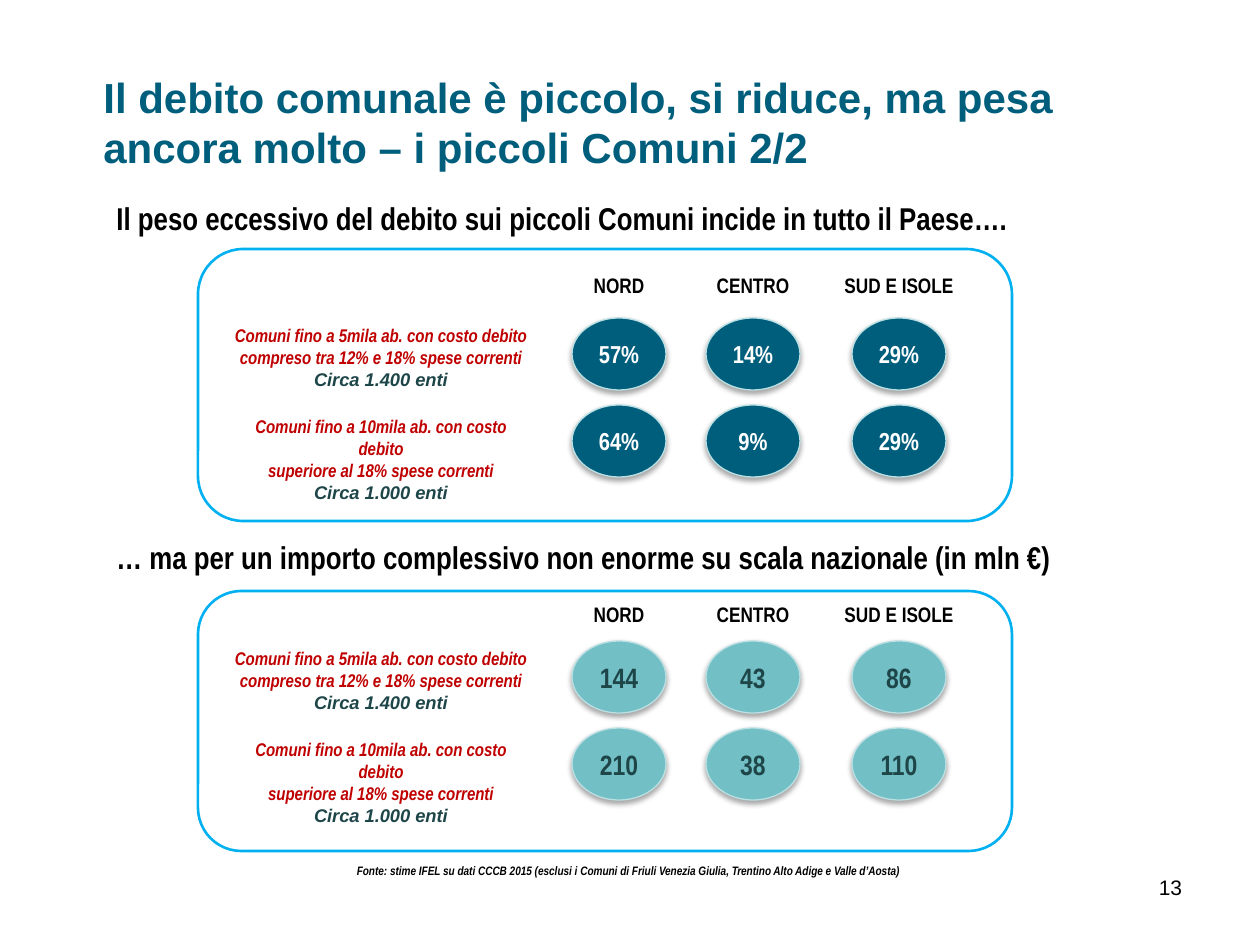
from lxml import etree
from pptx import Presentation
from pptx import util as u
from pptx.dml.color import RGBColor
from pptx.enum import shapes, text
from pptx.oxml import ns

PX = u.Inches(1) / 126
PETROL = RGBColor(0x00, 0x5E, 0x7D)
TEAL = RGBColor(0x72, 0xBF, 0xC5)
PALE = RGBColor(0xBB, 0xE0, 0xE3)
SKY = RGBColor(0x00, 0xB0, 0xF0)
RED = RGBColor(0xC0, 0x00, 0x00)
DARK = RGBColor(0x1E, 0x46, 0x49)
BLACK = RGBColor(0, 0, 0)
WHITE = RGBColor(0xFF, 0xFF, 0xFF)

CENTER = text.PP_ALIGN.CENTER
LEFT = text.PP_ALIGN.LEFT
MIDDLE = text.MSO_ANCHOR.MIDDLE
TOP = text.MSO_ANCHOR.TOP

NARROW = {"name": "Arial Narrow", "bold": True}
TITLE = {"name": "Arial", "size": u.Pt(24), "bold": True}
SUBTITLE = NARROW | {"size": u.Pt(18)}
AREA = NARROW | {"size": u.Pt(12)}
CRITERION = NARROW | {"size": u.Pt(10.5), "italic": True}
COUNT = CRITERION | {"name": "Arial"}
SOURCE = NARROW | {"size": u.Pt(7), "italic": True}
NUMBER = {"name": "Arial", "size": u.Pt(12)}

AREAS = [("NORD", 421, 82), ("CENTRO", 555, 107), ("SUD E ISOLE", 701, 163)]
GROUPS = [
    (["Comuni fino a 5mila ab. con costo debito",
      "compreso tra 12% e 18% spese correnti"], "Circa 1.400 enti", 79),
    (["Comuni fino a 10mila ab. con costo debito",
      "superiore al 18% spese correnti"], "Circa 1.000 enti", 102),
]
OVAL_W, OVAL_H = 94, 72
OVAL_PITCH, GROUP_PITCH = 87, 91


def emu(*lengths):
    """Turn px lengths into EMU."""
    return [round(length * PX) for length in lengths]


def write(frame, lines, align=LEFT, anchor=TOP, wrap=True):
    """Fill a text frame with (wording, font values, colour) lines."""
    for key, value in {"word_wrap": wrap, "vertical_anchor": anchor}.items():
        setattr(frame, key, value)
    for index, (wording, values, colour) in enumerate(lines):
        paragraph = frame.paragraphs[0] if index == 0 else frame.add_paragraph()
        paragraph.alignment = align
        run = paragraph.add_run()
        run.text = wording
        for key, value in values.items():
            setattr(run.font, key, value)
        run.font.color.rgb = colour


def add_label(slide, box, lines, **layout):
    """Place a text box in the given px box."""
    write(slide.shapes.add_textbox(*emu(*box)).text_frame, lines, **layout)


def add_shadow(shape):
    """Give a shape a soft shadow straight below it."""
    effects = shape.element.spPr.find(ns.qn("a:effectLst"))
    outer = etree.SubElement(effects, ns.qn("a:outerShdw"), blurRad="40000",
                             dist="23000", dir="5400000", rotWithShape="0")
    black = etree.SubElement(outer, ns.qn("a:srgbClr"), val="000000")
    etree.SubElement(black, ns.qn("a:alpha"), val="35000")


def add_oval(slide, box, wording, fill, colour, size):
    """Place one shaded value oval."""
    oval = slide.shapes.add_shape(shapes.MSO_SHAPE.OVAL, *emu(*box))
    oval.shadow.inherit = False
    add_shadow(oval)
    oval.fill.solid()
    oval.fill.fore_color.rgb = fill
    oval.line.color.rgb = PALE
    oval.line.width = u.Pt(0.75)
    write(oval.text_frame, [(wording, NARROW | {"size": u.Pt(size)}, colour)],
          align=CENTER, anchor=MIDDLE, wrap=False)


def add_panel(slide, box, header_top, body_top, rows, **oval_style):
    """Draw a framed panel of municipality groups by area."""
    left, top, width, height = box
    frame = slide.shapes.add_shape(shapes.MSO_SHAPE.ROUNDED_RECTANGLE, *emu(*box))
    frame.shadow.inherit = False
    frame.fill.background()
    frame.line.color.rgb = SKY
    frame.line.width = u.Pt(1.5)
    for area, center, area_width in AREAS:
        add_label(slide, (left + center - area_width / 2, top + header_top, area_width, 38),
                  [(area, AREA, BLACK)], align=CENTER, wrap=False)
    for row, (values, (criteria, count, group_height)) in enumerate(zip(rows, GROUPS)):
        lines = [(line, CRITERION, RED) for line in criteria] + [(count, COUNT, DARK)]
        add_label(slide, (left + 21, top + body_top + row * GROUP_PITCH, 324, group_height),
                  lines, align=CENTER)
        for value, (_, center, _) in zip(values, AREAS):
            add_oval(slide, (left + center - OVAL_W / 2, top + body_top + row * OVAL_PITCH,
                             OVAL_W, OVAL_H), value, **oval_style)


def add_debt_slide(deck):
    """Compose the slide on the debt of small municipalities."""
    slide = deck.slides.add_slide(deck.slide_layouts[6])
    add_label(slide, (91, 64, 999, 116),
              [("Il debito comunale è piccolo, si riduce, ma pesa ancora molto – i piccoli Comuni 2/2",
                TITLE, PETROL)], anchor=MIDDLE)
    add_label(slide, (104, 193, 953, 50),
              [("Il peso eccessivo del debito sui piccoli Comuni incide in tutto il Paese….",
                SUBTITLE, BLACK)], wrap=False)
    add_panel(slide, (198, 249, 814, 272), 17, 69, [("57%", "14%", "29%"), ("64%", "9%", "29%")],
              fill=PETROL, colour=WHITE, size=14)
    add_label(slide, (104, 532, 1012, 50),
              [("… ma per un importo complessivo non enorme su scala nazionale (in mln €)",
                SUBTITLE, BLACK)], wrap=False)
    add_panel(slide, (198, 591, 814, 260), 4, 50, [("144", "43", "86"), ("210", "38", "110")],
              fill=TEAL, colour=DARK, size=16)
    add_label(slide, (305, 857, 646, 29),
              [("Fonte: stime IFEL su dati CCCB 2015 (esclusi i Comuni di Friuli Venezia Giulia, "
                "Trentino Alto Adige e Valle d’Aosta)", SOURCE, BLACK)], align=CENTER)
    add_label(slide, (1120, 868, 101, 63), [("13", NUMBER, BLACK)], align=CENTER)


def main():
    """Build and save the deck."""
    deck = Presentation()
    deck.slide_width, deck.slide_height = emu(1260, 945)
    add_debt_slide(deck)
    deck.save("out.pptx")


if __name__ == "__main__":
    main()
